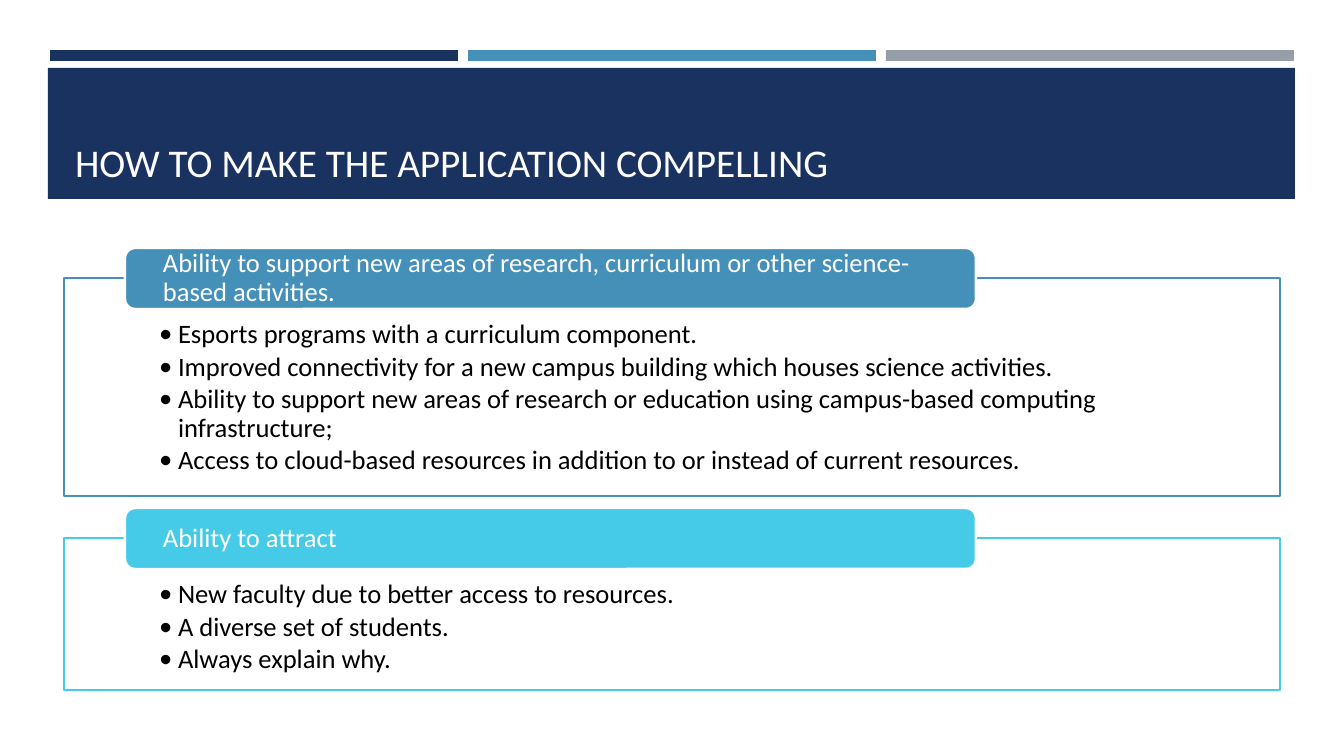
from lxml import etree
from pptx import Presentation
from pptx.dml.color import RGBColor
from pptx.enum.shapes import MSO_SHAPE
from pptx.enum.text import MSO_ANCHOR, PP_ALIGN
from pptx.oxml.ns import qn
from pptx.util import Pt

RECT = MSO_SHAPE.RECTANGLE
ROUND = MSO_SHAPE.ROUNDED_RECTANGLE
TOP, MIDDLE, BOTTOM = MSO_ANCHOR.TOP, MSO_ANCHOR.MIDDLE, MSO_ANCHOR.BOTTOM
LEFT = PP_ALIGN.LEFT

PX = 914400 / 100.8
COLORS = {
    "navy": "1A3260",
    "blue": "4590B8",
    "gray": "969FA7",
    "cyan": "45CBE8",
    "cream": "FFFEFF",
    "white": "FFFFFF",
    "black": "000000",
}
PANELS = [
    (278, 218, "blue",
     "Ability to support new areas of research, curriculum or other science-based activities.",
     ["Esports programs with a curriculum component.",
      "Improved connectivity for a new campus building which houses science activities.",
      "Ability to support new areas of research or education using campus-based computing infrastructure;",
      "Access to cloud-based resources in addition to or instead of current resources."]),
    (538, 152, "cyan",
     "Ability to attract",
     ["New faculty due to better access to resources.",
      "A diverse set of students.",
      "Always explain why."]),
]


def px(value):
    return round(value * PX)


def color(name):
    return RGBColor.from_string(COLORS[name])


def assign(target, values):
    for name, value in values.items():
        setattr(target, name, value)


class Deck:
    font = "Calibri"

    def __init__(self, width, height):
        self.file = Presentation()
        assign(self.file, {"slide_width": px(width), "slide_height": px(height)})
        self.slide = self.file.slides.add_slide(self.file.slide_layouts[6])

    def shape(self, kind, box, fill, line=None, alpha=None):
        shape = self.slide.shapes.add_shape(kind, *map(px, box))
        shape.shadow.inherit = False
        shape.fill.solid()
        shape.fill.fore_color.rgb = color(fill)
        if alpha:
            tint = shape.fill._xPr.find(qn("a:solidFill"))[0]
            etree.SubElement(tint, qn("a:alpha"), val=str(alpha * 1000))
        if line:
            shape.line.color.rgb = color(line)
            shape.line.width = Pt(1.75)
        else:
            shape.line.fill.background()
        return shape

    def text(self, shape, lines, size, ink, anchor, pads, bullet=False, leading=1.0):
        frame = shape.text_frame
        sides = ("margin_left", "margin_top", "margin_right", "margin_bottom")
        assign(frame, {"word_wrap": True, "vertical_anchor": anchor,
                       **dict(zip(sides, map(px, pads)))})
        for index, line in enumerate(lines):
            para = frame.add_paragraph() if index else frame.paragraphs[0]
            assign(para, {"alignment": LEFT, "line_spacing": leading})
            run = para.add_run()
            run.text = line
            assign(run.font, {"name": self.font, "size": Pt(size)})
            run.font.color.rgb = color(ink)
            if bullet:
                self.bullet(para)

    def bullet(self, para):
        para.space_after = Pt(2.6)
        props = para._p.get_or_add_pPr()
        props.set("marL", str(px(19)))
        props.set("indent", str(px(-19)))
        etree.SubElement(props, qn("a:buFont"), typeface=self.font)
        etree.SubElement(props, qn("a:buChar"), char="•")

    def title(self, line):
        self.shape(RECT, (48, 68, 1247, 131), "navy")
        box = self.slide.shapes.add_textbox(*map(px, (65, 78, 1216, 112)))
        self.text(box, [line], 28, "cream", BOTTOM, (10, 5, 10, 5))

    def panel(self, top, height, tint, label, items):
        body = self.shape(RECT, (64, top, 1216, height), "white", tint, 90)
        self.text(body, items, 19, "black", TOP, (95, 43, 95, 15), True, 0.9)
        tab = self.shape(ROUND, (125, top - 30, 851, 61), tint, "white")
        self.text(tab, [label], 19, "white", MIDDLE, (35, 3, 35, 3), leading=0.9)

    def save(self):
        self.file.save("out.pptx")


def main():
    deck = Deck(1344, 756)
    for index, tint in enumerate(("navy", "blue", "gray")):
        deck.shape(RECT, (50 + 418 * index, 50, 408, 11), tint)
    deck.title("HOW TO MAKE THE APPLICATION COMPELLING")
    for panel in PANELS:
        deck.panel(*panel)
    deck.save()


if __name__ == "__main__":
    main()
